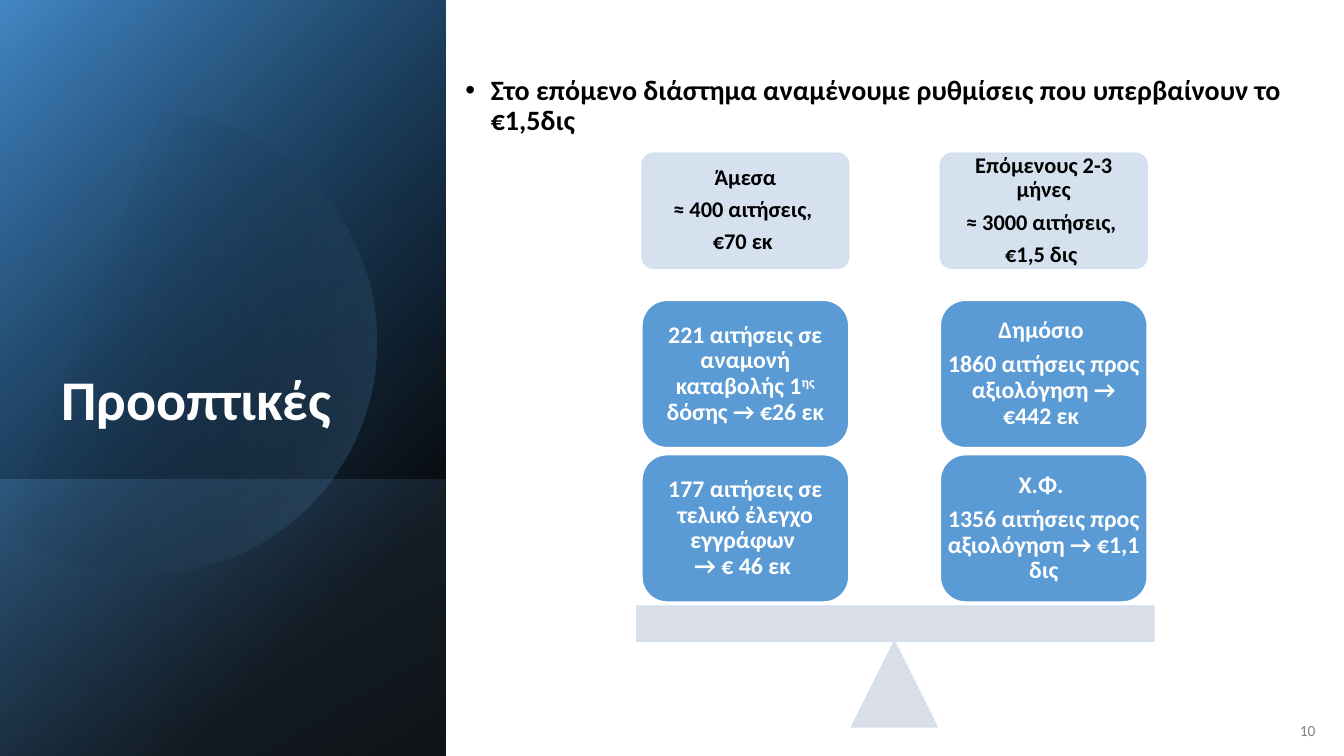
"""Build the slide "Προοπτικές" with its gradient panel and balance diagram."""
import math

from lxml import etree
from pptx import Presentation
from pptx.dml.color import RGBColor
from pptx.enum.shapes import MSO_SHAPE
from pptx.enum.text import MSO_ANCHOR, PP_ALIGN
from pptx.oxml.ns import qn
from pptx.util import Cm, Pt

RECTANGLE, ROUNDED, TRIANGLE = MSO_SHAPE.RECTANGLE, MSO_SHAPE.ROUNDED_RECTANGLE, MSO_SHAPE.ISOSCELES_TRIANGLE
MIDDLE, TOP, BOTTOM = MSO_ANCHOR.MIDDLE, MSO_ANCHOR.TOP, MSO_ANCHOR.BOTTOM
CENTER, LEFT = PP_ALIGN.CENTER, PP_ALIGN.LEFT

BLACK = RGBColor(0x00, 0x00, 0x00)
WHITE = RGBColor(0xFF, 0xFF, 0xFF)
GRAY = RGBColor(0x80, 0x80, 0x80)
DEEP_BLUE = RGBColor(0x2E, 0x75, 0xB6)
BLUE = RGBColor(0x5B, 0x9B, 0xD5)
PALE_BLUE = RGBColor(0x9D, 0xC3, 0xE6)
HEADING_FILL = RGBColor(0xD2, 0xDE, 0xEF)
SCALE_FILL = RGBColor(0xD6, 0xDC, 0xE5)

FONT = "Calibri"
SLIDE_WIDTH, SLIDE_HEIGHT = 33.87, 19.05
PANEL_WIDTH, BAND_TOP = 11.23, 12.09
BOX_WIDTH, HEADING_TOP, HEADING_HEIGHT, WEIGHT_HEIGHT = 5.21, 3.86, 2.9, 3.71
WEIGHT_TOP, WEIGHT_STEP = 7.57, 3.89

SIDES = [
    (16.18,
     [["Άμεσα"], ["≈ 400 αιτήσεις, "], ["€70 εκ "]],
     [[["221 αιτήσεις σε αναμονή καταβολής 1", "^ης", " δόσης → €26 εκ"]],
      [["177 αιτήσεις σε τελικό έλεγχο εγγράφων ", "\n", "→ € 46 εκ "]]]),
    (23.7,
     [["Επόμενους 2-3 μήνες"], ["≈ 3000 αιτήσεις, "], ["€1,5 δις "]],
     [[["Δημόσιο "], ["1860 αιτήσεις προς αξιολόγηση → €442 εκ "]],
      [["Χ.Φ. "], ["1356 αιτήσεις προς αξιολόγηση → €1,1 δις"]]]),
]


def set_alphas(shape, *percents):
    """Give the RGB colours of a shape, in order, their opacity."""
    colours = list(shape._element.spPr.iter(qn("a:srgbClr")))
    for colour, percent in zip(colours, percents):
        etree.SubElement(colour, qn("a:alpha"), val=str(percent * 1000))


def paint_gradient(shape, angle, start, end):
    """Fill with a clockwise-angled gradient; each end is position, colour, opacity."""
    shape.shadow.inherit = False
    shape.line.fill.background()
    shape.fill.gradient()
    shape.fill.gradient_angle = (360 - angle) % 360
    for stop, (position, colour, _) in zip(shape.fill.gradient_stops, (start, end)):
        stop.position = position
        stop.color.rgb = colour
    set_alphas(shape, start[2], end[2])


def add_gradient_block(page, top, angle, start, end):
    """Add a gradient rectangle from the given top to the foot of the panel."""
    block = page.shapes.add_shape(RECTANGLE, 0, Cm(top), Cm(PANEL_WIDTH), Cm(SLIDE_HEIGHT - top))
    paint_gradient(block, angle, start, end)


def add_disc(page, center_x, center_y, radius):
    """Add the panel's disc, cut off along the left slide edge."""
    reach = math.pi - math.acos(center_x / radius)
    angles = [-reach + 2 * reach * step / 120 for step in range(121)]
    points = [(Cm(center_x + radius * math.cos(angle)), Cm(center_y + radius * math.sin(angle)))
              for angle in angles]
    builder = page.shapes.build_freeform(*points[0])
    builder.add_line_segments(points[1:], close=True)
    paint_gradient(builder.convert_to_shape(), 20, (0.29, BLACK, 0), (1, BLUE, 30))


def add_panel(page):
    """Add the layered blue panel on the left."""
    add_gradient_block(page, 0, 45, (0, DEEP_BLUE, 100), (0.8, BLACK, 100))
    add_gradient_block(page, 0, 45, (0, BLUE, 46), (0.8, BLACK, 0))
    add_gradient_block(page, BAND_TOP, 60, (0, BLUE, 29), (1, BLACK, 30))
    add_disc(page, 3.63, 8.61, 5.86)
    add_gradient_block(page, 0, 60, (0, BLACK, 0), (1, PALE_BLUE, 11))


def add_spans(para, pieces, size, colour, bold):
    """Add runs; a piece may be a line break or a ^superscript."""
    for piece in pieces:
        if piece == "\n":
            para.add_line_break()
            continue
        span = para.add_run()
        span.text = piece.lstrip("^")
        span.font.name = FONT
        span.font.size = Pt(size)
        span.font.bold = bold
        span.font.color.rgb = colour
        if piece.startswith("^"):
            span._r.get_or_add_rPr().set("baseline", "30000")


def add_text(page, text, left, top, width, height, size, colour, bold=True, anchor=MIDDLE):
    """Add a one-paragraph text box and return its paragraph."""
    box = page.shapes.add_textbox(Cm(left), Cm(top), Cm(width), Cm(height))
    frame = box.text_frame
    frame.word_wrap = True
    frame.vertical_anchor = anchor
    para = frame.paragraphs[0]
    para.alignment = LEFT
    para.line_spacing = 0.9
    add_spans(para, [text], size, colour, bold)
    return para


def add_bullet(para):
    """Turn a paragraph into a hanging bullet."""
    properties = para._p.get_or_add_pPr()
    properties.set("marL", str(Cm(0.64)))
    properties.set("indent", str(-Cm(0.64)))
    etree.SubElement(properties, qn("a:buFont"), typeface="Arial")
    etree.SubElement(properties, qn("a:buChar"), char="•")


def add_block(page, kind, left, top, width, height, fill, line, opacity=100):
    """Add one flat outlined shape of the diagram."""
    block = page.shapes.add_shape(kind, Cm(left), Cm(top), Cm(width), Cm(height))
    block.shadow.inherit = False
    block.fill.solid()
    block.fill.fore_color.rgb = fill
    block.line.color.rgb = line
    block.line.width = Pt(1)
    set_alphas(block, opacity, opacity)
    return block


def fill_box(box, corner, paragraphs, size, colour):
    """Round a box and write its centred bold paragraphs."""
    box.adjustments[0] = corner
    frame = box.text_frame
    frame.word_wrap = True
    frame.vertical_anchor = MIDDLE
    inset = max(0, round(Cm(0.18) - 0.29 * corner * box.height))
    frame.margin_left = frame.margin_right = inset
    frame.margin_top = frame.margin_bottom = inset
    for index, pieces in enumerate(paragraphs):
        para = frame.add_paragraph() if index else frame.paragraphs[0]
        para.alignment = CENTER
        para.line_spacing = 0.9
        para.space_after = Pt(round(size * 0.35, 1))
        add_spans(para, pieces, size, colour, True)


def add_balance(page):
    """Add the scale with its headings and stacked weights."""
    add_block(page, TRIANGLE, 21.46, 16.16, 2.16, 2.16, SCALE_FILL, HEADING_FILL, 90)
    add_block(page, RECTANGLE, 16.05, 15.27, 13.03, 0.89, SCALE_FILL, HEADING_FILL, 90)
    for left, heading, weights in SIDES:
        box = add_block(page, ROUNDED, left, HEADING_TOP, BOX_WIDTH, HEADING_HEIGHT,
                        HEADING_FILL, HEADING_FILL, 90)
        fill_box(box, 0.1, heading, 16, BLACK)
        for row, paragraphs in enumerate(weights):
            box = add_block(page, ROUNDED, left, WEIGHT_TOP + row * WEIGHT_STEP,
                            BOX_WIDTH, WEIGHT_HEIGHT, BLUE, WHITE)
            fill_box(box, 0.17, paragraphs, 17, WHITE)


def main():
    """Build and save the deck."""
    deck = Presentation()
    deck.slide_width, deck.slide_height = Cm(SLIDE_WIDTH), Cm(SLIDE_HEIGHT)
    page = deck.slides.add_slide(deck.slide_layouts[6])
    add_panel(page)
    add_text(page, "Προοπτικές", 1.3, 1.63, 8.89, 9.4, 40, WHITE, anchor=BOTTOM)
    add_text(page, "10", 32.51, 17.93, 1.24, 1.02, 11, GRAY, bold=False)
    add_balance(page)
    message = add_text(page, "Στο επόμενο διάστημα αναμένουμε ρυθμίσεις που υπερβαίνουν το €1,5δις",
                       11.48, 1.8, 21.87, 1.9, 20, BLACK, anchor=TOP)
    add_bullet(message)
    deck.save("out.pptx")


if __name__ == "__main__":
    main()
